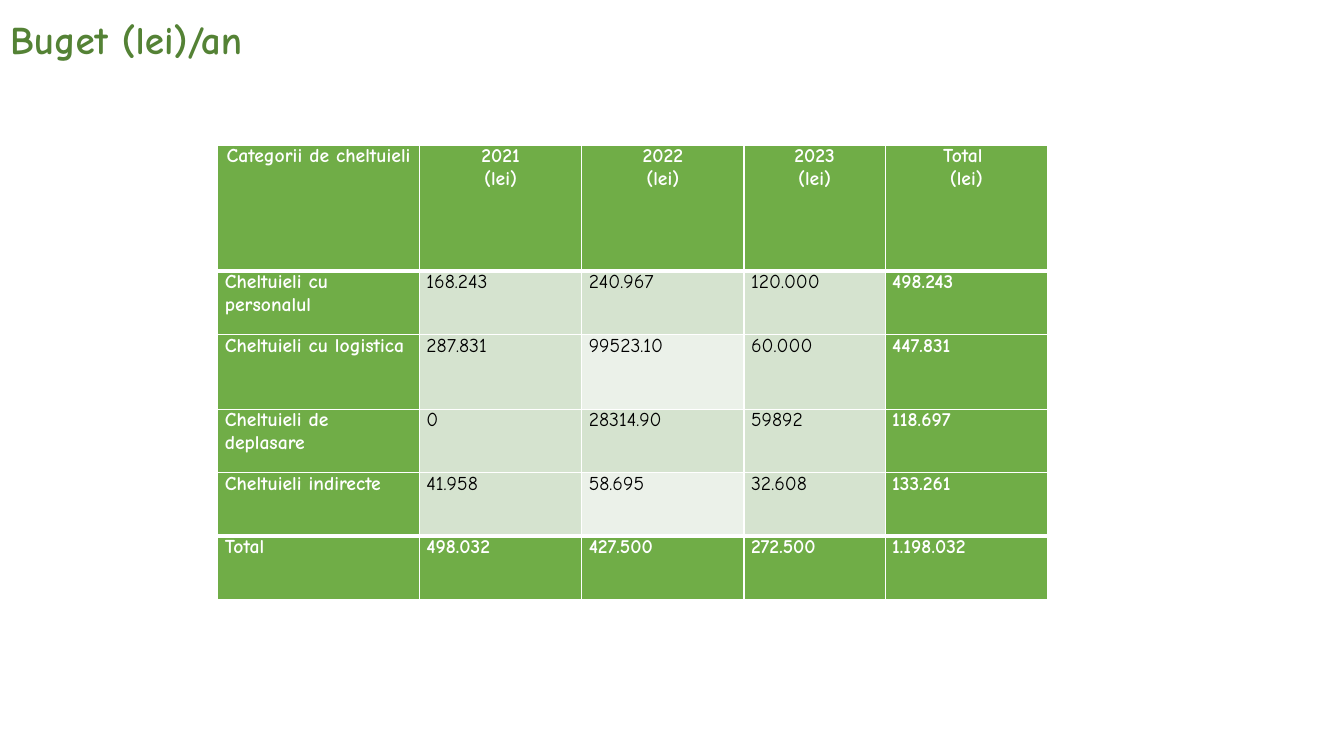
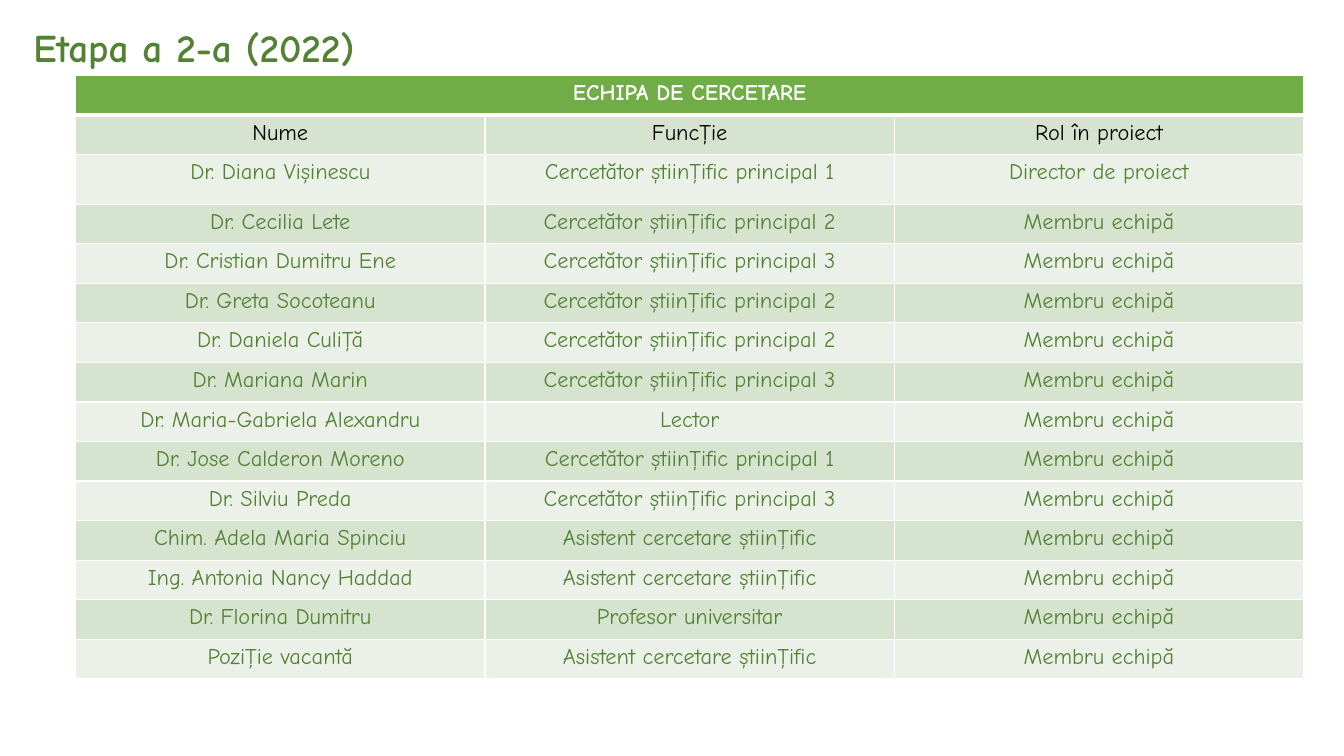
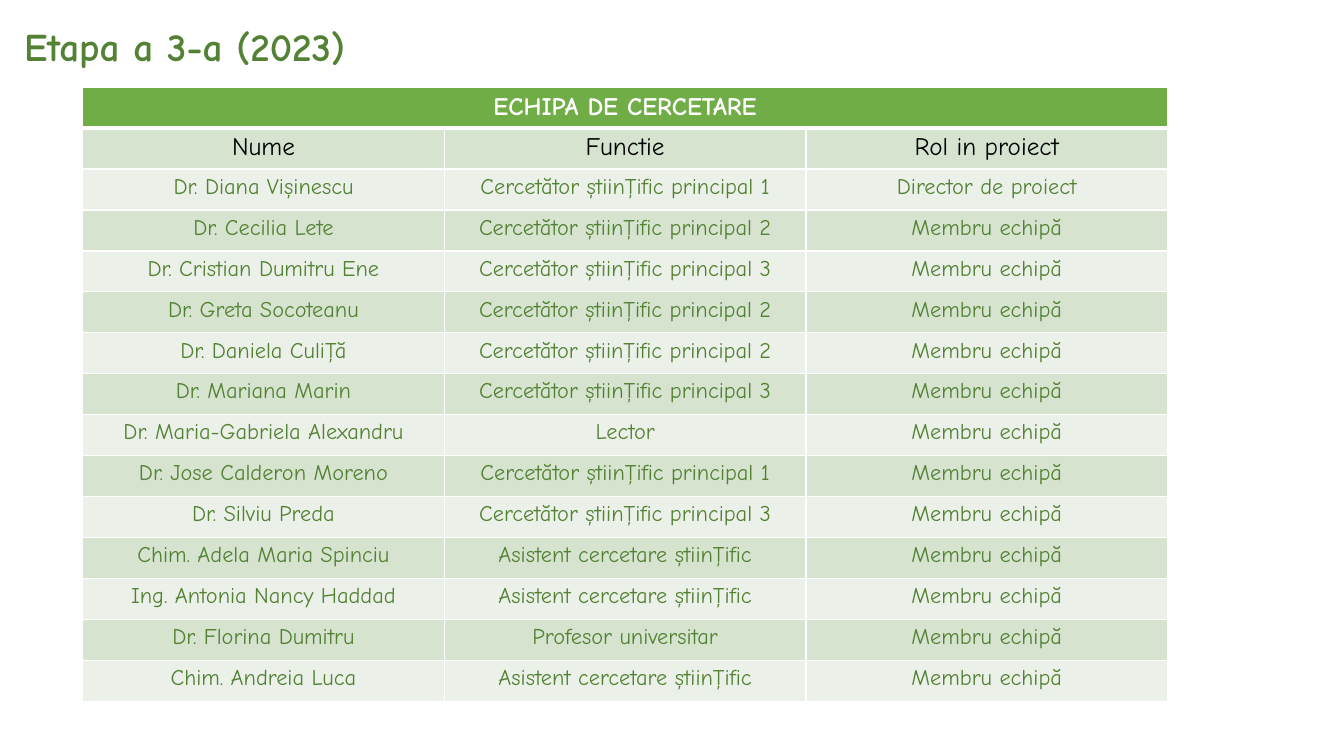
from dataclasses import dataclass
from typing import Callable, NamedTuple

import lxml.etree
import pptx
import pptx.dml.color
import pptx.enum.text
import pptx.oxml.ns
import pptx.presentation
import pptx.slide
import pptx.table
import pptx.util

Inches = pptx.util.Inches
Pt = pptx.util.Pt
RGBColor = pptx.dml.color.RGBColor
Align = pptx.enum.text.PP_ALIGN

WHITE = RGBColor(0xFF, 0xFF, 0xFF)
BLACK = RGBColor(0x00, 0x00, 0x00)
GREEN = RGBColor(0x70, 0xAD, 0x47)
DARK_GREEN = RGBColor(0x54, 0x82, 0x35)
BAND = RGBColor(0xD5, 0xE3, 0xCF)
PALE_BAND = RGBColor(0xEB, 0xF1, 0xE9)

FONT = "Comic Neue"
TITLE_SIZE = 28
TITLE_HEIGHT = 0.57
THIN, THICK = 1, 3


class CellStyle(NamedTuple):
    fill: RGBColor
    color: RGBColor
    size: int
    bold: bool = False
    alignment: Align = Align.CENTER


@dataclass
class TitleBox:
    text: str
    left: float
    top: float
    width: float


@dataclass
class TableGrid:
    left: float
    top: float
    widths: list[float]
    heights: list[float]
    rows: list[list[str]]
    style_for: Callable[[int, int], CellStyle]
    thick_lines: set[int]
    margins: tuple[float, float] = (0.1, 0.05)
    merge_header: bool = False


@dataclass
class TeamStage:
    title: TitleBox
    left: float
    top: float
    width: float
    height: float
    special_heights: dict[int, float]
    headings: list[str]
    heading_size: int
    last_member: str


BUDGET_TITLE = TitleBox("Buget (lei)/an", 0, 0.1, 5.6)
BUDGET_ROWS = [
    ["Categorii de cheltuieli", "2021\n(lei)", "2022\n(lei)", "2023\n(lei)", "Total \n(lei)"],
    ["Cheltuieli cu personalul", "168.243", "240.967", "120.000", "498.243"],
    ["Cheltuieli cu logistica", "287.831", "99523.10", "60.000", "447.831"],
    ["Cheltuieli de deplasare", "0", "28314.90", "59892", "118.697"],
    ["Cheltuieli indirecte", "41.958", "58.695", "32.608", "133.261"],
    ["Total", "498.032", "427.500", "272.500", "1.198.032"],
]

DIRECTOR = "Director de proiect"
MEMBER = "Membru echipă"
RESEARCHER = "Cercetător știinţific principal"
ASSISTANT = "Asistent cercetare știinţific"
TEAM = [
    ("Dr. Diana Vișinescu", f"{RESEARCHER} 1"),
    ("Dr. Cecilia Lete", f"{RESEARCHER} 2"),
    ("Dr. Cristian Dumitru Ene", f"{RESEARCHER} 3"),
    ("Dr. Greta Socoteanu", f"{RESEARCHER} 2"),
    ("Dr. Daniela Culiţă", f"{RESEARCHER} 2"),
    ("Dr. Mariana Marin", f"{RESEARCHER} 3"),
    ("Dr. Maria-Gabriela Alexandru", "Lector"),
    ("Dr. Jose Calderon Moreno", f"{RESEARCHER} 1"),
    ("Dr. Silviu Preda", f"{RESEARCHER} 3"),
    ("Chim. Adela Maria Spinciu", ASSISTANT),
    ("Ing. Antonia Nancy Haddad", ASSISTANT),
    ("Dr. Florina Dumitru", "Profesor universitar"),
]
STAGES = [
    TeamStage(
        TitleBox("Etapa a 2-a (2022)", 0.23, 0.18, 5.6),
        0.75, 0.75, 12.18, 5.99, {2: 0.49},
        ["Nume", "Funcţie", "Rol în proiect"], 16, "Poziţie vacantă",
    ),
    TeamStage(
        TitleBox("Etapa a 3-a (2023)", 0.14, 0.17, 6.67),
        0.82, 0.87, 10.76, 6.08, {0: 0.39},
        ["Nume", "Functie", "Rol in proiect"], 18, "Chim. Andreia Luca",
    ),
]


def format_text(
    text_frame: pptx.text.text.TextFrame, size: int, color: RGBColor, bold: bool, alignment: Align
) -> None:
    for paragraph in text_frame.paragraphs:
        paragraph.alignment = alignment
        for run in paragraph.runs:
            run.font.name = FONT
            run.font.size = Pt(size)
            run.font.bold = bold
            run.font.color.rgb = color


def add_titled_slide(
    presentation: pptx.presentation.Presentation, title: TitleBox
) -> pptx.slide.Slide:
    slide = presentation.slides.add_slide(presentation.slide_layouts[5])
    shape = slide.shapes.title
    shape.left, shape.top = Inches(title.left), Inches(title.top)
    shape.width, shape.height = Inches(title.width), Inches(TITLE_HEIGHT)
    text_frame = shape.text_frame
    text_frame.text = title.text
    text_frame.vertical_anchor = pptx.enum.text.MSO_ANCHOR.TOP
    text_frame.auto_size = pptx.enum.text.MSO_AUTO_SIZE.SHAPE_TO_FIT_TEXT
    format_text(text_frame, TITLE_SIZE, DARK_GREEN, True, Align.LEFT)
    return slide


def set_borders(cell: pptx.table._Cell, top: int, bottom: int) -> None:
    properties = cell._tc.get_or_add_tcPr()
    qualified = pptx.oxml.ns.qn
    for side, points in (("L", THIN), ("R", THIN), ("T", top), ("B", bottom)):
        line = lxml.etree.SubElement(properties, qualified(f"a:ln{side}"), w=str(Pt(points)))
        fill = lxml.etree.SubElement(line, qualified("a:solidFill"))
        lxml.etree.SubElement(fill, qualified("a:srgbClr"), val=str(WHITE))


def draw_table(slide: pptx.slide.Slide, grid: TableGrid) -> None:
    table = slide.shapes.add_table(
        len(grid.heights), len(grid.widths),
        Inches(grid.left), Inches(grid.top),
        Inches(sum(grid.widths)), Inches(sum(grid.heights)),
    ).table
    for column, width in zip(table.columns, grid.widths):
        column.width = Inches(width)
    for row, height in zip(table.rows, grid.heights):
        row.height = Inches(height)
    if grid.merge_header:
        table.cell(0, 0).merge(table.cell(0, len(grid.widths) - 1))

    side_margin, end_margin = map(Inches, grid.margins)
    for row_index, texts in enumerate(grid.rows):
        top, bottom = (
            THICK if edge in grid.thick_lines else THIN for edge in (row_index, row_index + 1)
        )
        for column_index, text in enumerate(texts):
            cell = table.cell(row_index, column_index)
            style = grid.style_for(row_index, column_index)
            cell.margin_left = cell.margin_right = side_margin
            cell.margin_top = cell.margin_bottom = end_margin
            set_borders(cell, top, bottom)
            cell.fill.solid()
            cell.fill.fore_color.rgb = style.fill
            cell.text_frame.text = text
            format_text(cell.text_frame, style.size, style.color, style.bold, style.alignment)


def budget_style(row: int, column: int) -> CellStyle:
    if row == 0:
        return CellStyle(GREEN, WHITE, 14, True)
    if column == 0:
        return CellStyle(GREEN, WHITE, 14, True, Align.LEFT)
    if row == len(BUDGET_ROWS) - 1 or column == 4:
        return CellStyle(GREEN, WHITE, 14, True, Align.JUSTIFY)
    fill = PALE_BAND if column == 2 and row % 2 == 0 else BAND
    return CellStyle(fill, BLACK, 14, False, Align.JUSTIFY)


def budget_grid() -> TableGrid:
    return TableGrid(
        left=2.16,
        top=1.44,
        widths=[2, 1.61, 1.61, 1.4, 1.61],
        heights=[1.25, 0.63, 0.74, 0.63, 0.63, 0.63],
        rows=BUDGET_ROWS,
        style_for=budget_style,
        thick_lines={1, 5},
        margins=(0.07, 0),
    )


def team_grid(stage: TeamStage) -> TableGrid:
    def team_style(row: int, column: int) -> CellStyle:
        if row == 0:
            return CellStyle(GREEN, WHITE, stage.heading_size, True)
        if row == 1:
            return CellStyle(BAND, BLACK, stage.heading_size)
        return CellStyle(BAND if row % 2 else PALE_BAND, DARK_GREEN, 16)

    people = [*TEAM, (stage.last_member, ASSISTANT)]
    rows = [["ECHIPA DE CERCETARE", "", ""], stage.headings]
    for index, (name, position) in enumerate(people):
        rows.append([name, position, MEMBER if index else DIRECTOR])
    special = stage.special_heights
    regular = (stage.height - sum(special.values())) / (len(rows) - len(special))
    return TableGrid(
        left=stage.left,
        top=stage.top,
        widths=[stage.width / 3] * 3,
        heights=[special.get(index, regular) for index in range(len(rows))],
        rows=rows,
        style_for=team_style,
        thick_lines={1},
        merge_header=True,
    )


def main() -> None:
    presentation = pptx.Presentation()
    presentation.slide_width = Inches(13.33)
    presentation.slide_height = Inches(7.5)
    draw_table(add_titled_slide(presentation, BUDGET_TITLE), budget_grid())
    for stage in STAGES:
        draw_table(add_titled_slide(presentation, stage.title), team_grid(stage))
    presentation.save("out.pptx")


if __name__ == "__main__":
    main()
